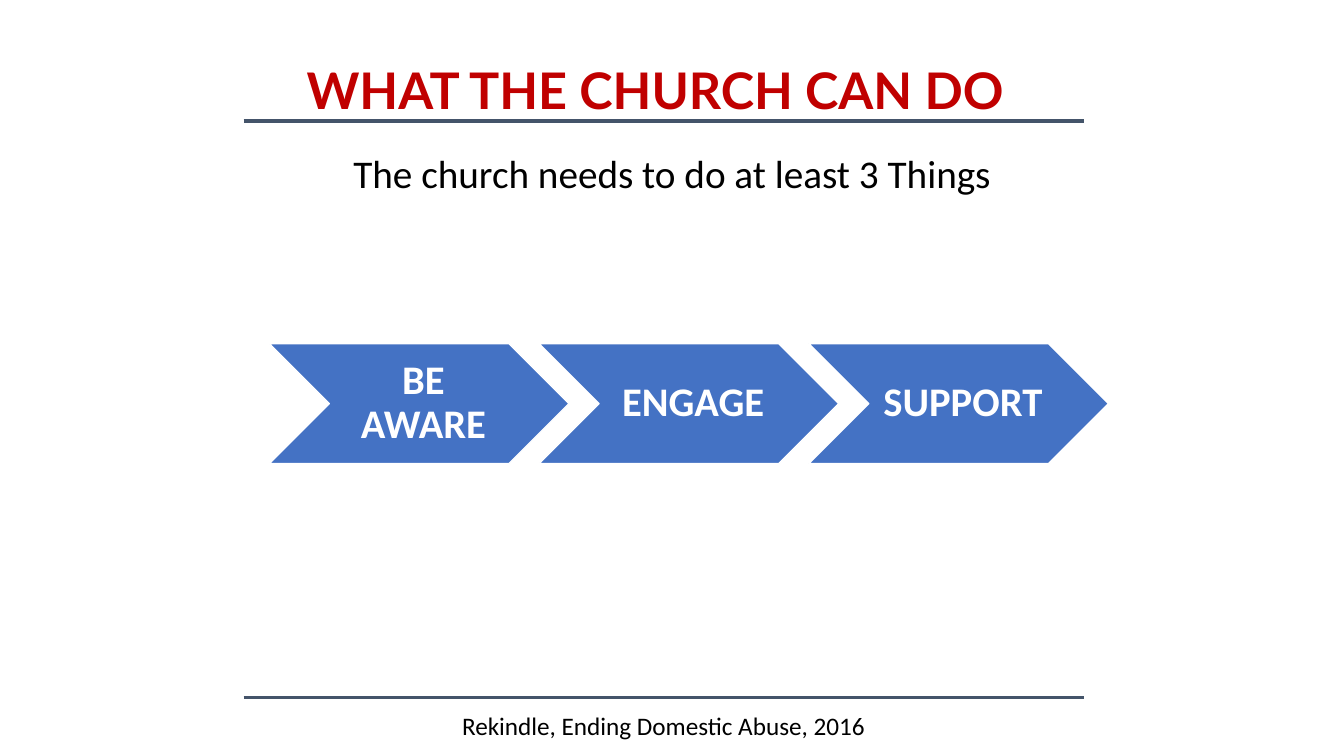
from dataclasses import dataclass

from lxml import etree
from pptx import Presentation
from pptx.dml.color import RGBColor
from pptx.enum.shapes import MSO_CONNECTOR, MSO_SHAPE
from pptx.enum.text import MSO_ANCHOR, PP_ALIGN
from pptx.oxml.ns import qn
from pptx.util import Pt

CHEVRON = MSO_SHAPE.CHEVRON
STRAIGHT = MSO_CONNECTOR.STRAIGHT
MIDDLE = MSO_ANCHOR.MIDDLE
CENTER = PP_ALIGN.CENTER


@dataclass(frozen=True)
class Theme:
    title_color: RGBColor = RGBColor(0xC0, 0x00, 0x00)
    text_color: RGBColor = RGBColor(0x00, 0x00, 0x00)
    rule_color: RGBColor = RGBColor(0x44, 0x54, 0x6A)
    step_color: RGBColor = RGBColor(0x44, 0x72, 0xC4)
    white: RGBColor = RGBColor(0xFF, 0xFF, 0xFF)
    title_font: str = "Lato"
    body_font: str = "Calibri"
    title_size: int = 36
    subtitle_size: int = 28
    step_size: int = 29
    source_size: int = 18


theme = Theme()


def write_centered(shape, text, font_name, size, color, bold=False):
    shape.text_frame.word_wrap = True
    paragraph = shape.text_frame.paragraphs[0]
    paragraph.alignment = CENTER
    run = paragraph.add_run()
    run.text = text
    run.font.name = font_name
    run.font.size = Pt(size)
    run.font.color.rgb = color
    run.font.bold = bold
    return paragraph


presentation = Presentation()
presentation.slide_width = Pt(960)
presentation.slide_height = Pt(540)
slide = presentation.slides.add_slide(presentation.slide_layouts[6])

# Subtitle
subtitle = slide.shapes.add_textbox(Pt(156), Pt(106.8), Pt(648), Pt(38))
subtitle_paragraph = write_centered(
    subtitle, "The church needs to do at least 3 Things",
    theme.body_font, theme.subtitle_size, theme.text_color)
subtitle_paragraph.line_spacing = 0.9

# Rules under the title and above the source
for rule_top in (86.4, 498.2):
    rule = slide.shapes.add_connector(
        STRAIGHT, Pt(174), Pt(rule_top), Pt(774), Pt(rule_top))
    rule.line.color.rgb = theme.rule_color
    rule.line.width = Pt(2.25)
    etree.SubElement(rule.element.spPr, qn("a:effectLst"))

# Title and source
title = slide.shapes.add_textbox(Pt(138), Pt(39), Pt(660), Pt(51))
write_centered(title, "WHAT THE CHURCH CAN DO",
               theme.title_font, theme.title_size, theme.title_color, bold=True)
source = slide.shapes.add_textbox(Pt(174), Pt(504), Pt(600), Pt(29))
write_centered(source, "Rekindle, Ending Domestic Abuse, 2016",
               theme.body_font, theme.source_size, theme.text_color)

# Three steps, each chevron nesting into the one before
STEP_LEFT, STEP_PITCH = 192.4, 192.7
for index, label in enumerate(("BE AWARE", "ENGAGE", "SUPPORT")):
    step = slide.shapes.add_shape(
        CHEVRON, Pt(STEP_LEFT + index * STEP_PITCH), Pt(245.5), Pt(214), Pt(85.6))
    step.shadow.inherit = False
    step.fill.solid()
    step.fill.fore_color.rgb = theme.step_color
    step.line.color.rgb = theme.white
    step.line.width = Pt(1)
    frame = step.text_frame
    frame.vertical_anchor = MIDDLE
    frame.margin_left = Pt(9.2)
    frame.margin_right = frame.margin_top = frame.margin_bottom = Pt(3)
    step_paragraph = write_centered(
        step, label, theme.body_font, theme.step_size, theme.white, bold=True)
    step_paragraph.line_spacing = 0.9

presentation.save("out.pptx")
